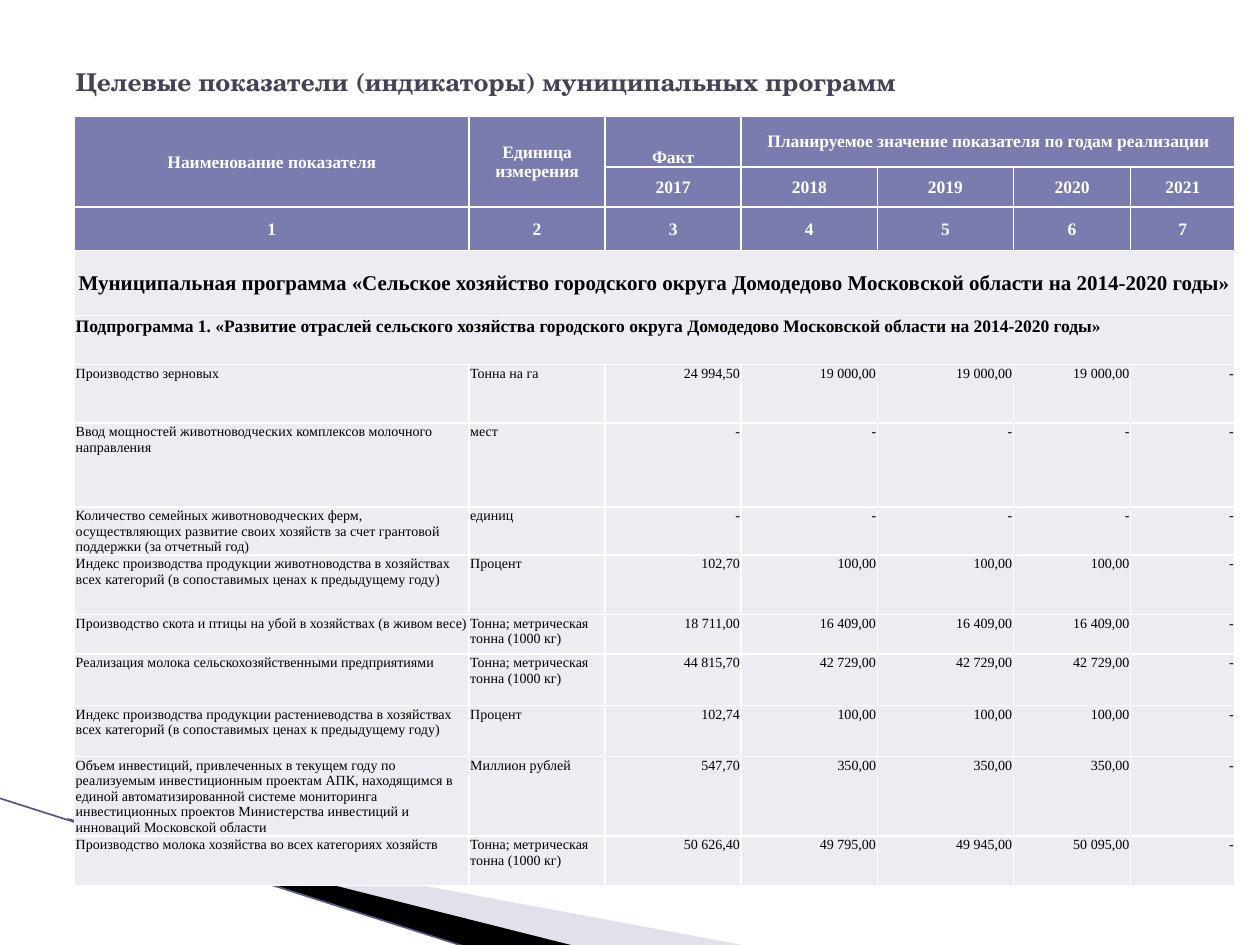
from dataclasses import dataclass

from lxml.etree import SubElement
from pptx import Presentation
from pptx.dml.color import RGBColor
from pptx.enum.text import MSO_ANCHOR as Anchor, PP_ALIGN as Align
from pptx.oxml import parse_xml
from pptx.oxml.ns import nsdecls, qn
from pptx.util import Pt


@dataclass(frozen=True)
class Theme:
    title_font: str = "TeX Gyre Schola"
    table_font: str = "Times New Roman"
    title_size: float = 14
    program_size: float = 12
    head_size: float = 10
    body_size: float = 8
    title: str = "424456"
    head_fill: str = "7A7BAE"
    body_fill: str = "ECECF2"
    light: str = "FFFFFF"
    dark: str = "000000"
    wedge: str = "B6B6D1"
    ray: str = "53548A"


THEME = Theme()
COLUMN_WIDTHS = [225.4, 77.8, 77.8, 77.8, 77.8, 67, 59.6]
ROW_HEIGHTS = [29, 23, 25, 37, 28, 33.5, 48, 27.5, 34, 22.5, 29.5, 29, 45.5, 28.5]

TITLE = "Целевые показатели (индикаторы) муниципальных программ"
HEADINGS = [
    ["Наименование показателя", "Единица измерения", "Факт",
     "Планируемое значение показателя по годам реализации", "", "", ""],
    ["", ""] + [str(year) for year in range(2017, 2022)],
    [str(number) for number in range(1, 8)],
]
PROGRAM = ("Муниципальная программа «Сельское хозяйство городского округа "
           "Домодедово Московской области на 2014-2020 годы»")
SUBPROGRAM = ("Подпрограмма 1. «Развитие отраслей сельского хозяйства городского округа "
              "Домодедово Московской области на 2014-2020 годы»")
TONNES = "Тонна; метрическая тонна (1000 кг)"
NONE = "-"
INDICATORS = [
    ["Производство зерновых", "Тонна на га",
     "24 994,50", *["19 000,00"] * 3, NONE],
    ["Ввод мощностей животноводческих комплексов молочного направления", "мест",
     *[NONE] * 5],
    ["Количество семейных животноводческих ферм, осуществляющих развитие своих "
     "хозяйств за счет грантовой поддержки (за отчетный год)", "единиц", *[NONE] * 5],
    ["Индекс производства продукции животноводства в хозяйствах всех категорий "
     "(в сопоставимых ценах к предыдущему году)", "Процент",
     "102,70", *["100,00"] * 3, NONE],
    ["Производство скота и птицы на убой в хозяйствах (в живом весе)", TONNES,
     "18 711,00", *["16 409,00"] * 3, NONE],
    ["Реализация молока сельскохозяйственными предприятиями", TONNES,
     "44 815,70", *["42 729,00"] * 3, NONE],
    ["Индекс производства продукции растениеводства в хозяйствах всех категорий "
     "(в сопоставимых ценах к предыдущему году)", "Процент",
     "102,74", *["100,00"] * 3, NONE],
    ["Объем инвестиций, привлеченных в текущем году по реализуемым инвестиционным "
     "проектам АПК, находящимся в единой автоматизированной системе мониторинга "
     "инвестиционных проектов Министерства инвестиций и инноваций Московской области",
     "Миллион рублей", "547,70", *["350,00"] * 3, NONE],
    ["Производство молока хозяйства во всех категориях хозяйств", TONNES,
     "50 626,40", "49 795,00", "49 945,00", "50 095,00", NONE],
]


def rgb(value):
    return RGBColor.from_string(value)


def style_text(paragraph, font_name, size, color, bold, align):
    paragraph.alignment = align
    font = paragraph.font
    font.name, font.size, font.bold = font_name, Pt(size), bold
    font.color.rgb = rgb(color)


def add_wedge(slide, left, top, points, color, opacity=None):
    outline = [(Pt(left + x), Pt(top + y)) for x, y in points]
    builder = slide.shapes.build_freeform(*outline[0])
    builder.add_line_segments(outline[1:], close=True)
    wedge = builder.convert_to_shape()
    wedge.shadow.inherit = False
    wedge.line.fill.background()
    wedge.fill.solid()
    wedge.fill.fore_color.rgb = rgb(color)
    if opacity:
        color_node = wedge.fill._xPr.find(qn("a:solidFill"))[0]
        SubElement(color_node, qn("a:alpha"), val=str(opacity * 1000))


def add_rays(slide, left, top):
    add_wedge(slide, left, top, [(39.6, 12.5), (428.4, 84.7), (328.3, 84.7), (39.6, 12)],
              THEME.wedge, 40)
    add_wedge(slide, left, top, [(38.2, 11.5), (329, 84.7), (267.8, 85.4), (38.9, 12)],
              THEME.dark)
    ray = slide.shapes.add_connector(1, Pt(left - 0.7), Pt(top), Pt(left + 267.1), Pt(top + 85.4))
    ray.line.color.rgb = rgb(THEME.ray)
    ray.line.width = Pt(0.95)
    SubElement(ray._element.spPr, qn("a:effectLst"))


def place_title(slide, left, top, width, height):
    title = slide.shapes.title
    title.left, title.top, title.width, title.height = map(Pt, (left, top, width, height))
    frame = title.text_frame
    frame.text = TITLE
    frame.vertical_anchor = Anchor.MIDDLE
    style_text(frame.paragraphs[0], THEME.title_font, THEME.title_size, THEME.title,
               True, Align.LEFT)


def fill_cell(cell, text, size, color, fill, bold, align, anchor):
    cell.text = text
    cell.vertical_anchor = anchor
    cell.margin_left = cell.margin_right = cell.margin_top = Pt(0.7)
    cell.margin_bottom = 0
    style_text(cell.text_frame.paragraphs[0], THEME.table_font, size, color, bold, align)
    cell.fill.solid()
    cell.fill.fore_color.rgb = rgb(fill)
    properties = cell._tc.get_or_add_tcPr()
    for position, side in enumerate("LRTB"):
        properties.insert(position, parse_xml(
            f'<a:ln{side} {nsdecls("a")} w="{Pt(1)}"><a:solidFill>'
            f'<a:srgbClr val="{THEME.light}"/></a:solidFill></a:ln{side}>'))


def add_indicators(slide, left, top):
    table = slide.shapes.add_table(
        len(ROW_HEIGHTS), len(COLUMN_WIDTHS), Pt(left), Pt(top),
        Pt(sum(COLUMN_WIDTHS)), Pt(sum(ROW_HEIGHTS))).table
    table.first_row = table.horz_banding = False
    for column, width in zip(table.columns, COLUMN_WIDTHS):
        column.width = Pt(width)
    for row, height in zip(table.rows, ROW_HEIGHTS):
        row.height = Pt(height)

    last = len(COLUMN_WIDTHS) - 1
    program_row = len(HEADINGS)
    subprogram_row = program_row + 1
    blanks = [""] * last
    contents = HEADINGS + [[PROGRAM] + blanks, [SUBPROGRAM] + blanks] + INDICATORS
    for r, texts in enumerate(contents):
        for c, text in enumerate(texts):
            size, color, fill = THEME.body_size, THEME.dark, THEME.body_fill
            align = Align.LEFT if c < 2 else Align.RIGHT
            anchor = Anchor.TOP
            if r < program_row:
                size, color, fill = THEME.head_size, THEME.light, THEME.head_fill
                align = Align.CENTER
                anchor = Anchor.BOTTOM if (r, c) == (0, 2) else Anchor.MIDDLE
            elif r == program_row:
                size, align, anchor = THEME.program_size, Align.CENTER, Anchor.MIDDLE
            elif r == subprogram_row:
                size = THEME.head_size
            fill_cell(table.cell(r, c), text, size, color, fill,
                      r <= subprogram_row, align, anchor)

    for start, end in [((0, 0), (1, 0)), ((0, 1), (1, 1)), ((0, 3), (0, last)),
                       ((program_row, 0), (program_row, last)),
                       ((subprogram_row, 0), (subprogram_row, last))]:
        table.cell(*start).merge(table.cell(*end))


def main():
    deck = Presentation()
    deck.slide_width, deck.slide_height = Pt(720), Pt(540)
    slide = deck.slides.add_slide(deck.slide_layouts[5])
    add_rays(slide, 0, 456)
    place_title(slide, 36, 21.6, 648, 49.7)
    add_indicators(slide, 42.6, 66.3)
    deck.save("out.pptx")


if __name__ == "__main__":
    main()
